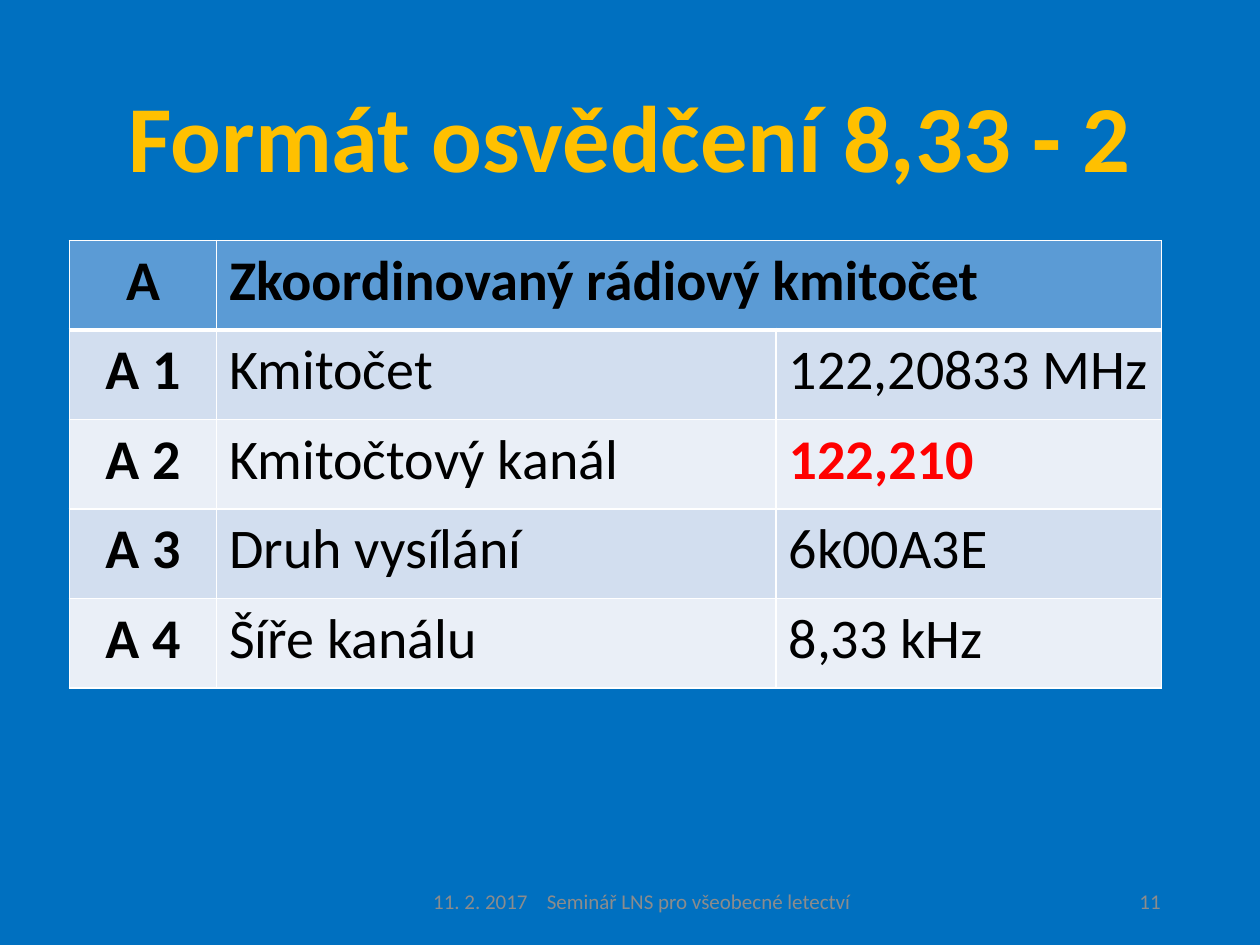
from lxml.etree import SubElement
from pptx import Presentation
from pptx.dml.color import RGBColor
from pptx.enum.text import MSO_ANCHOR as Anchor, MSO_AUTO_SIZE as AutoSize, PP_ALIGN as Align
from pptx.oxml.ns import qn
from pptx.util import Inches, Pt

BLUE, GOLD, GRAY = "0070C0", "FFC000", "8C8C8C"
BLACK, WHITE, RED = "000000", "FFFFFF", "FF0000"
HEADER_FILL, BAND_FILLS = "5B9BD5", ("D2DEEF", "EAEFF7")
COLUMN_WIDTHS = (1.17, 4.44, 3.06)
ROW_HEIGHT = 0.71
ROWS = (
    ("A", "Zkoordinovaný rádiový kmitočet", ""),
    ("A 1", "Kmitočet", "122,20833 MHz"),
    ("A 2", "Kmitočtový kanál", "122,210"),
    ("A 3", "Druh vysílání", "6k00A3E"),
    ("A 4", "Šíře kanálu", "8,33 kHz"),
)
HIGHLIGHT = "122,210"


def color(hex_value):
    return RGBColor.from_string(hex_value)


def format_text(frame, size, hex_value, align, bold=False):
    for paragraph in frame.paragraphs:
        paragraph.alignment = align
        for run in paragraph.runs:
            font = run.font
            font.name, font.size, font.bold = "Calibri", Pt(size), bold
            font.color.rgb = color(hex_value)


def set_title(slide, text):
    title = slide.shapes.title
    title.left, title.top = Inches(0.69), Inches(0.4)
    title.width, title.height = Inches(8.62), Inches(1.45)
    frame = title.text_frame
    frame.text = text
    frame.auto_size = AutoSize.NONE
    frame.vertical_anchor = Anchor.MIDDLE
    frame.paragraphs[0].line_spacing = 0.9
    format_text(frame, 54, GOLD, Align.CENTER, bold=True)


def set_borders(cell, top, bottom):
    """Draw white cell borders; top and bottom are widths in points."""
    properties = cell._tc.get_or_add_tcPr()
    for side, width in (("L", 1), ("R", 1), ("T", top), ("B", bottom)):
        line = SubElement(properties, qn(f"a:ln{side}"), w=str(Pt(width)))
        fill = SubElement(line, qn("a:solidFill"))
        SubElement(fill, qn("a:srgbClr"), val=WHITE)


def add_frequency_table(slide):
    table = slide.shapes.add_table(
        len(ROWS), len(COLUMN_WIDTHS), Inches(0.55), Inches(1.91),
        Inches(sum(COLUMN_WIDTHS)), Inches(ROW_HEIGHT * len(ROWS))).table
    for column, width in zip(table.columns, COLUMN_WIDTHS):
        column.width = Inches(width)
    for r, texts in enumerate(ROWS):
        table.rows[r].height = Inches(ROW_HEIGHT)
        for c, text in enumerate(texts):
            cell = table.cell(r, c)
            set_borders(cell, top=3 if r == 1 else 1, bottom=3 if r == 0 else 1)
            cell.fill.solid()
            cell.fill.fore_color.rgb = color(BAND_FILLS[(r - 1) % 2] if r else HEADER_FILL)
            cell.text_frame.text = text
            format_text(cell.text_frame, 32, RED if text == HIGHLIGHT else BLACK,
                        Align.LEFT if c else Align.CENTER,
                        bold=r == 0 or c == 0 or text == HIGHLIGHT)
    table.cell(0, 1).merge(table.cell(0, 2))


def add_footer(slide, left, width, align, *parts):
    """Add a footer line whose parts are set apart by a widened space."""
    box = slide.shapes.add_textbox(Inches(left), Inches(6.95), Inches(width), Inches(0.4))
    frame = box.text_frame
    frame.word_wrap = True
    frame.vertical_anchor = Anchor.MIDDLE
    paragraph = frame.paragraphs[0]
    for i, part in enumerate(parts):
        if i:
            gap = paragraph.add_run()
            gap.text = " "
            gap.font._element.set("spc", "810")
        paragraph.add_run().text = part
    format_text(frame, 12, GRAY, align)


def main():
    prs = Presentation()
    prs.slide_width, prs.slide_height = Inches(10), Inches(7.5)
    slide = prs.slides.add_slide(prs.slide_layouts[5])
    slide.background.fill.solid()
    slide.background.fill.fore_color.rgb = color(BLUE)
    set_title(slide, "Formát osvědčení 8,33 - 2")
    add_frequency_table(slide)
    add_footer(slide, 7.06, 2.25, Align.RIGHT, "11")
    add_footer(slide, 3.31, 3.57, Align.CENTER,
               "11. 2. 2017", "Seminář LNS pro všeobecné letectví")
    prs.save("out.pptx")


if __name__ == "__main__":
    main()
